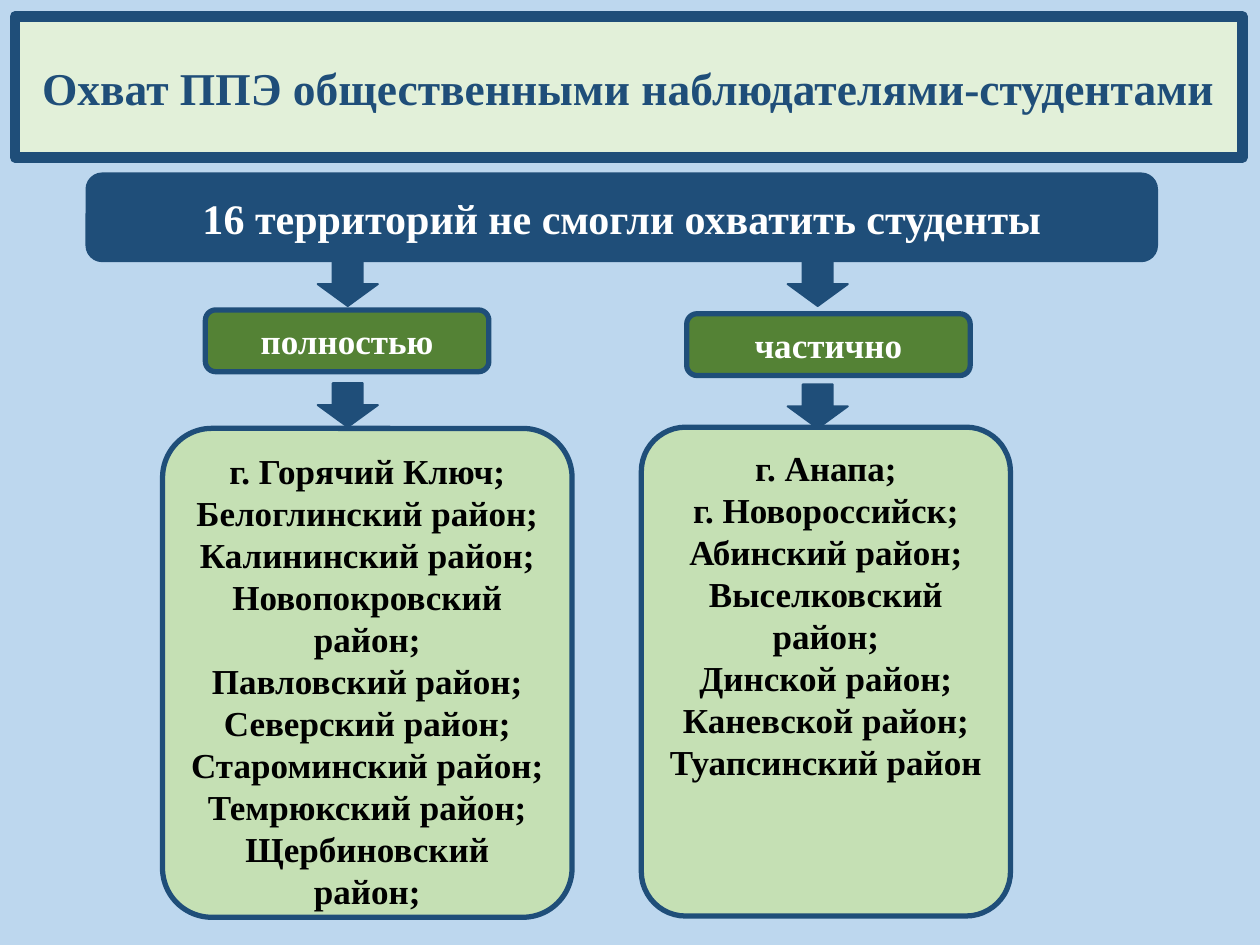
"""Build the slide on how student observers cover the exam sites."""
from dataclasses import dataclass

from pptx import Presentation
from pptx import util as u
from pptx.dml import color
from pptx.enum import shapes, text


@dataclass(frozen=True)
class Theme:
    sky: str = "BDD7EE"
    navy: str = "1F4E79"
    mint: str = "E2F0D9"
    leaf: str = "C5E0B4"
    green: str = "548235"
    white: str = "FFFFFF"
    black: str = "000000"
    font: str = "Times New Roman"
    title: int = 26
    heading: int = 24
    body: int = 20


theme = Theme()
deck = Presentation()
deck.slide_width, deck.slide_height = u.Inches(10), u.Inches(7.5)
page = deck.slides.add_slide(deck.slide_layouts[6])
page.background.fill.solid()
page.background.fill.fore_color.rgb = color.RGBColor.from_string(theme.sky)


def add_box(kind, place, fill, border=3):
    box = page.shapes.add_shape(kind, *map(u.Inches, place))
    box.shadow.inherit = False
    box.fill.solid()
    box.fill.fore_color.rgb = color.RGBColor.from_string(fill)
    box.line.color.rgb = color.RGBColor.from_string(theme.navy)
    box.line.width = u.Pt(border)
    return box


def write(box, lines, size, ink, anchor=text.MSO_ANCHOR.MIDDLE):
    frame = box.text_frame
    frame.word_wrap = True
    frame.vertical_anchor = anchor
    style = {"name": theme.font, "size": u.Pt(size), "bold": True}
    for index, line in enumerate(lines):
        para = frame.add_paragraph() if index else frame.paragraphs[0]
        para.alignment = text.PP_ALIGN.CENTER
        span = para.add_run()
        span.text = line
        for name, value in style.items():
            setattr(span.font, name, value)
        span.font.color.rgb = color.RGBColor.from_string(ink)


rect = shapes.MSO_SHAPE.RECTANGLE
rounded = shapes.MSO_SHAPE.ROUNDED_RECTANGLE
arrow = shapes.MSO_SHAPE.DOWN_ARROW

title = add_box(rect, (0.12, 0.13, 9.74, 1.12), theme.mint, 6)
write(title, ["Охват ППЭ общественными наблюдателями-студентами"], theme.title, theme.navy)
heading = add_box(rounded, (0.7, 1.39, 8.47, 0.67), theme.navy)
write(heading, ["16 территорий не смогли охватить студенты"], theme.heading, theme.white)

columns = [
    {
        "label": "полностью",
        "label_at": (1.63, 2.46),
        "arrow_left": 2.52,
        "arrow_tops": (2.08, 3.04),
        "list_at": (1.29, 3.4, 3.25, 3.88),
        "places": [
            "г. Горячий Ключ;",
            "Белоглинский район;",
            "Калининский район;",
            "Новопокровский район;",
            "Павловский район;",
            "Северский район;",
            "Староминский район;",
            "Темрюкский район;",
            "Щербиновский район;",
        ],
    },
    {
        "label": "частично",
        "label_at": (5.45, 2.49),
        "arrow_left": 6.25,
        "arrow_tops": (2.08, 3.05),
        "list_at": (5.09, 3.39, 2.93, 3.88),
        "places": [
            "г. Анапа;",
            "г. Новороссийск;",
            "Абинский район;",
            "Выселковский район;",
            "Динской район;",
            "Каневской район;",
            "Туапсинский район",
        ],
    },
]

for column in columns:
    for top in column["arrow_tops"]:
        add_box(arrow, (column["arrow_left"], top, 0.48, 0.35), theme.navy, 1)
    label = add_box(rounded, (*column["label_at"], 2.25, 0.49), theme.green)
    write(label, [column["label"]], theme.body, theme.white)
    places = add_box(rounded, column["list_at"], theme.leaf)
    places.adjustments[0] = 0.12
    write(places, column["places"], theme.body, theme.black, text.MSO_ANCHOR.TOP)

deck.save("out.pptx")
